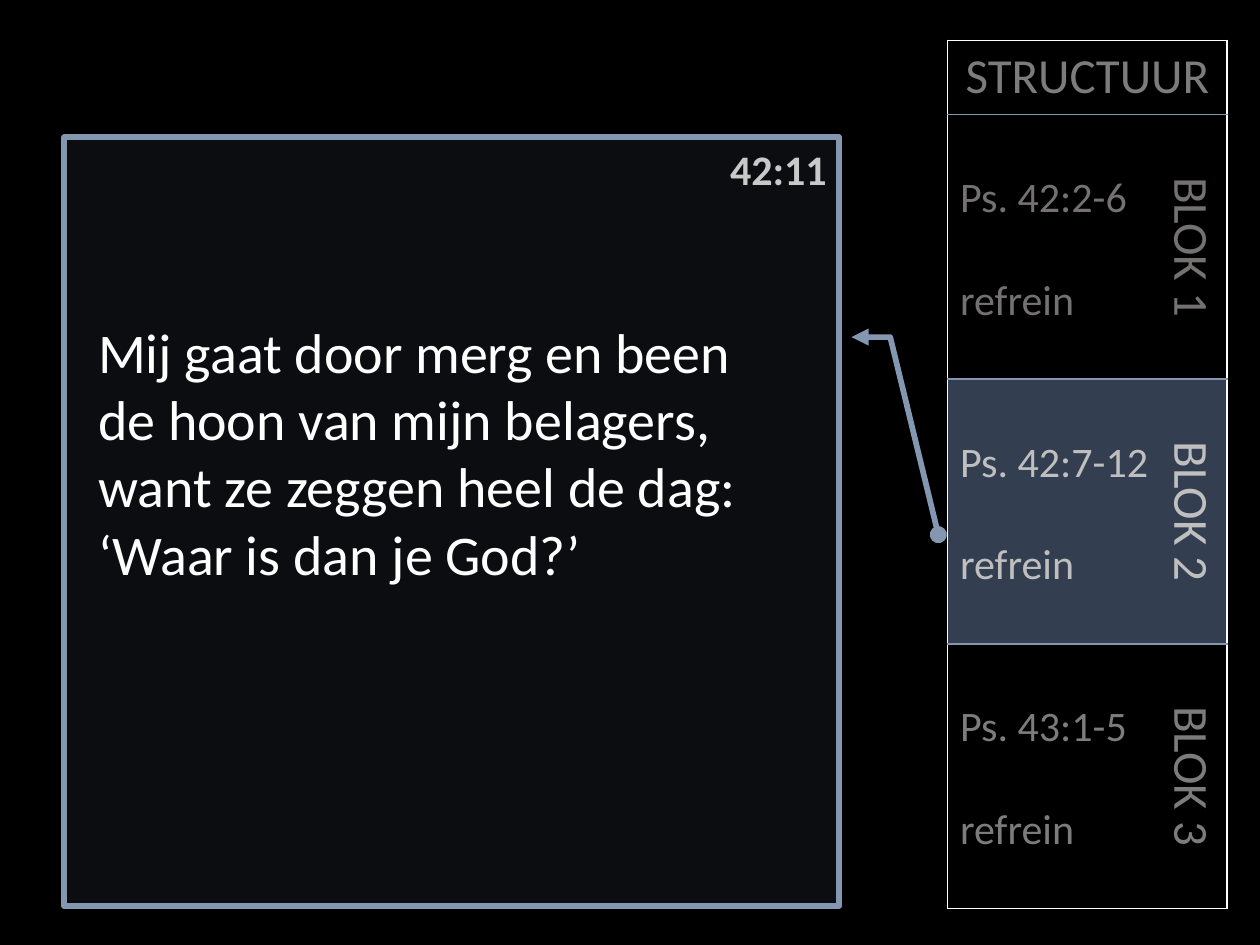
from pptx import Presentation
from pptx.dml.color import RGBColor as Rgb
from pptx.enum.shapes import MSO_SHAPE as Shape
from pptx.enum.text import MSO_ANCHOR as Anchor, PP_ALIGN as Align
from pptx.oxml.ns import qn
from pptx.util import Inches, Pt
from lxml.etree import SubElement as Sub

COLORS = {
    "back": "000000", "white": "FFFFFF", "rule": "8497B0", "box": "222A35",
    "active": "333F50", "verse": "C9C9C9", "dim": "7C7C7C",
    "dark": "767171", "light": "BFBFBF",
}
HEAD = "STRUCTUUR"
BLOCKS = [  # passage, second line, block, text colour, fill
    ("Ps. 42:2-6", "refrein", "BLOK 1", "dark", None),
    ("Ps. 42:7-12", "refrein", "BLOK 2", "light", "active"),
    ("Ps. 43:1-5", "refrein", "BLOK 3", "dim", None),
]
VERSE = "42:11"
LINES = [
    "Mij gaat door merg en been",
    "de hoon van mijn belagers,",
    "want ze zeggen heel de dag:",
    "‘Waar is dan je God?’",
]
COLS = [1.77, 0.45]
ROWS = [0.59] + [2.1] * len(BLOCKS)
BENDS = [0.26, 1.016, 0.26, 1.066, 0.517, 1.128]  # y, x of each callout point


def rgb(name):
    return Rgb.from_string(COLORS[name])


def write(frame, lines, size, color, align=Align.LEFT, bold=False):
    frame.text = "\n".join(lines)
    for para in frame.paragraphs:
        para.alignment = align
        for run in para.runs:
            font = run.font
            font.name, font.size, font.bold = "Calibri", Pt(size), bold
            font.color.rgb = rgb(color)


def paint(cell, edges, fill):
    """Set the borders, then the fill, in the order the schema asks for."""
    props = cell._tc.get_or_add_tcPr()
    for side in "LRTB":
        line = Sub(props, qn("a:ln" + side), w=str(Pt(1)))
        if side in edges:
            solid = Sub(line, qn("a:solidFill"))
            Sub(solid, qn("a:srgbClr"), val=COLORS[edges[side]])
        else:
            Sub(line, qn("a:noFill"))
    if fill:
        cell.fill.solid()
        cell.fill.fore_color.rgb = rgb(fill)
    else:
        cell.fill.background()


def add_table(slide):
    table = slide.shapes.add_table(
        len(ROWS), len(COLS), Inches(7.52), Inches(0.32),
        Inches(sum(COLS)), Inches(sum(ROWS))).table
    table.first_row = table.horz_banding = False
    for col, width in zip(table.columns, COLS):
        col.width = Inches(width)
    for row, height in zip(table.rows, ROWS):
        row.height = Inches(height)

    fills = [None] + [block[-1] for block in BLOCKS]
    last = len(ROWS) - 1
    for r, fill in enumerate(fills):
        ends = {"T": "rule" if r else "white", "B": "rule" if r < last else "white"}
        paint(table.cell(r, 0), {"L": "white", **ends}, fill)
        paint(table.cell(r, 1), {"R": "white", **ends}, fill)

    head = table.cell(0, 0)
    head.merge(table.cell(0, 1))
    head._tc.tcPr.find(qn("a:lnR")).getparent().replace(
        head._tc.tcPr.find(qn("a:lnR")), right_edge(table.cell(0, 1)))
    write(head.text_frame, [HEAD], 28, "dim", Align.CENTER)

    for r, (psalm, part, block, color, _) in enumerate(BLOCKS, 1):
        left, right = table.cell(r, 0), table.cell(r, 1)
        left.margin_top = Inches(0.46)
        write(left.text_frame, [psalm, part], 24, color)
        left.text_frame.paragraphs[1].space_before = Pt(29.3)
        right.vertical_anchor = Anchor.MIDDLE
        right._tc.tcPr.set("vert", "vert")
        write(right.text_frame, [block], 28, color, Align.CENTER)


def right_edge(cell):
    return cell._tc.tcPr.find(qn("a:lnR"))


def add_callout(slide):
    box = slide.shapes.add_shape(
        Shape.LINE_CALLOUT_2, Inches(0.51), Inches(1.09), Inches(6.15), Inches(6.1))
    box.shadow.inherit = False
    for i, bend in enumerate(BENDS):
        box.adjustments[i] = bend
    box.fill.solid()
    box.fill.fore_color.rgb = rgb("box")
    tone = box._element.spPr.find(qn("a:solidFill"))[0]
    Sub(tone, qn("a:alpha"), val="33000")
    box.line.color.rgb = rgb("rule")
    box.line.width = Pt(3.25)
    line = box.line._get_or_add_ln()
    Sub(line, qn("a:headEnd"), type="triangle")
    Sub(line, qn("a:tailEnd"), type="oval")


def add_text(slide, place, *style):
    frame = slide.shapes.add_textbox(*map(Inches, place)).text_frame
    frame.word_wrap = True
    write(frame, *style)


def main():
    deck = Presentation()
    deck.slide_width, deck.slide_height = Inches(10), Inches(7.5)
    slide = deck.slides.add_slide(deck.slide_layouts[6])
    slide.background.fill.solid()
    slide.background.fill.fore_color.rgb = rgb("back")
    add_table(slide)
    add_callout(slide)
    add_text(slide, (0.68, 2.47, 5.98, 2.26), LINES, 32, "white")
    add_text(slide, (5.48, 1.09, 1.18, 0.5), [VERSE], 24, "verse", Align.RIGHT, True)
    deck.save("out.pptx")


if __name__ == "__main__":
    main()
